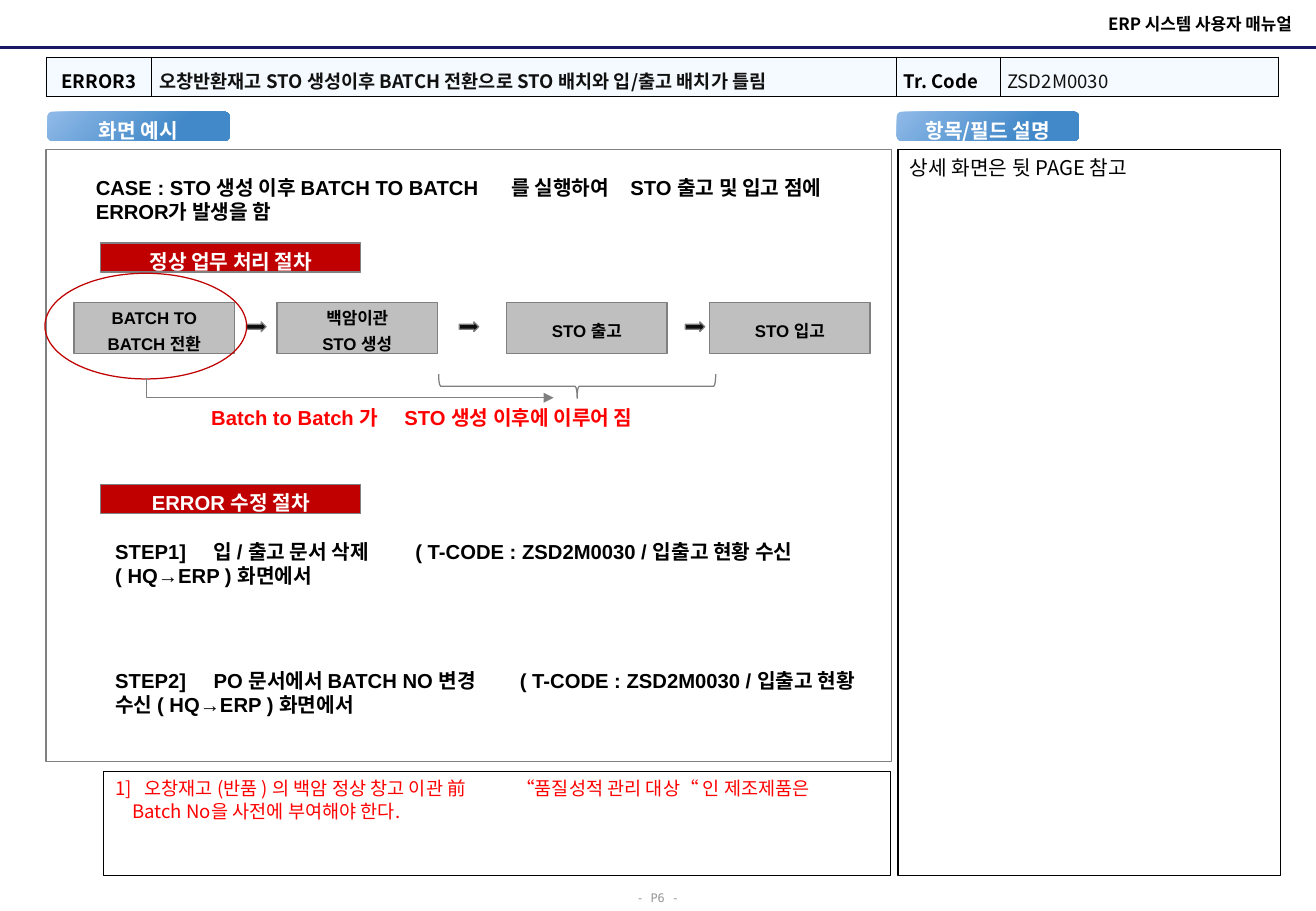
from lxml.etree import SubElement
from pptx import Presentation
from pptx.dml.color import RGBColor
from pptx.enum.shapes import MSO_CONNECTOR, MSO_SHAPE
from pptx.enum.text import MSO_ANCHOR, MSO_AUTO_SIZE, PP_ALIGN
from pptx.oxml.ns import qn
from pptx.util import Inches, Pt

NOTO = "Noto Sans CJK KR"
ARIAL = "Arial"
GREY = "808080"
RED = "C00000"
LEFT, MID, RIGHT, JUST = PP_ALIGN.LEFT, PP_ALIGN.CENTER, PP_ALIGN.RIGHT, PP_ALIGN.JUSTIFY


def color(code):
    """Turn a hex string into a colour."""
    return RGBColor.from_string(code)


def box(*sides):
    """Turn numbers into inch lengths."""
    return [Inches(side) for side in sides]


def write(frame, text, size=12, font=ARIAL, ink="000000", bold=True,
          align=LEFT, space=None, tabs=(), inset=0):
    """Fill a text frame, one paragraph per line, with the given format."""
    for row, line in enumerate(text.split("\n")):
        para = frame.add_paragraph() if row else frame.paragraphs[0]
        para.alignment = align
        if space:
            para.line_spacing = space
        props = para._p.get_or_add_pPr()
        if row and inset:
            props.set("marL", str(Inches(inset)))
        if "\t" in line:
            stops = SubElement(props, qn("a:tabLst"))
            for stop in tabs:
                SubElement(stops, qn("a:tab"), pos=str(Inches(stop)), algn="l")
        run = para.add_run()
        run.text = line
        face = run.font
        face.name, face.size, face.bold = font, Pt(size), bold
        face.color.rgb = color(ink)
        SubElement(run._r.get_or_add_rPr(), qn("a:ea"), typeface=NOTO)


def label(slide, text, x, y, w, h, wrap=True, **look):
    """Add a plain text box."""
    frame = slide.shapes.add_textbox(*box(x, y, w, h)).text_frame
    frame.word_wrap = wrap
    write(frame, text, **look)


def block(slide, kind, x, y, w, h, fill=None, line=GREY, text="",
          anchor=MSO_ANCHOR.MIDDLE, **look):
    """Add a preset shape with optional fill, outline and text."""
    shape = slide.shapes.add_shape(kind, *box(x, y, w, h))
    shape.shadow.inherit = False
    if fill:
        shape.fill.solid()
        shape.fill.fore_color.rgb = color(fill)
    else:
        shape.fill.background()
    if line:
        shape.line.color.rgb = color(line)
        shape.line.width = Pt(0.75)
    else:
        shape.line.fill.background()
    if text:
        shape.text_frame.word_wrap = True
        shape.text_frame.vertical_anchor = anchor
        write(shape.text_frame, text, **look)
    return shape


def link(slide, kind, ends, ink, width):
    """Add a connector without shadow."""
    line = slide.shapes.add_connector(kind, *box(*ends))
    line.line.color.rgb = color(ink)
    line.line.width = Pt(width)
    SubElement(line._element.spPr, qn("a:effectLst"))
    return line


def pill(slide, text, x, y):
    """Add a gradient heading above a panel."""
    shape = block(slide, MSO_SHAPE.ROUNDED_RECTANGLE, x, y, 1.5, 0.24, line=None,
                  text=text, font=NOTO, ink="FFFFFF", align=MID, space=1.5)
    shape.fill.gradient()
    shape.fill.gradient_angle = 315
    first, last = shape.fill.gradient_stops
    first.color.rgb, last.color.rgb = color("90BAE8"), color("4289C9")
    last.position = 0.7
    frame = shape.text_frame
    frame.margin_left = frame.margin_top = frame.margin_right = 0
    frame.margin_bottom = Inches(0.04)


def banner(slide, text, x, y):
    """Add a red section heading."""
    block(slide, MSO_SHAPE.RECTANGLE, x, y, 2.14, 0.24, fill=RED, text=text,
          ink="FFFFFF", align=MID, space=1.3)


def header(slide, x, y, w):
    """Place the page title and the rule under it."""
    title = slide.shapes.title
    title.left, title.top, title.width, title.height = box(x + w - 4.79, y + 0.06, 4.69, 0.27)
    frame = title.text_frame
    frame.auto_size = MSO_AUTO_SIZE.NONE
    frame.vertical_anchor = MSO_ANCHOR.MIDDLE
    write(frame, "ERP 시스템 사용자 매뉴얼", size=10, font=NOTO, align=RIGHT)
    link(slide, MSO_CONNECTOR.STRAIGHT, (x, y + 0.39, x + w, y + 0.39), "191966", 1.5)


def border(cell):
    """Draw thin black lines round a table cell."""
    props = cell._tc.get_or_add_tcPr()
    for spot, side in enumerate(("a:lnL", "a:lnR", "a:lnT", "a:lnB")):
        edge = props.makeelement(qn(side), {"w": str(Pt(0.5))})
        paint = SubElement(edge, qn("a:solidFill"))
        SubElement(paint, qn("a:srgbClr"), val="000000")
        props.insert(spot, edge)


def caption(slide, x, y):
    """Place the table that names the error and its code."""
    cells = (("ERROR3", 0.87, "000000", True, MID),
             ("오창반환재고 STO 생성이후 BATCH 전환으로 STO 배치와 입/출고 배치가 틀림",
              6.13, "111111", True, LEFT),
             ("Tr. Code", 0.85, "000000", True, LEFT),
             ("ZSD2M0030", 2.29, "111111", False, LEFT))
    table = slide.shapes.add_table(1, len(cells), *box(x, y, 10.14, 0.32)).table
    for col, (text, width, ink, bold, align) in enumerate(cells):
        table.columns[col].width = Inches(width)
        cell = table.cell(0, col)
        cell.margin_left = cell.margin_right = Inches(0.06)
        cell.margin_top = cell.margin_bottom = Inches(0.01)
        cell.vertical_anchor = MSO_ANCHOR.MIDDLE
        cell.fill.solid()
        cell.fill.fore_color.rgb = color("F4FAFF")
        border(cell)
        write(cell.text_frame, text, size=11, font=NOTO, ink=ink, bold=bold,
              align=align, space=1.3)


def flow(slide, x, y):
    """Place the four process boxes with their arrows and marks."""
    steps = (("BATCH TO\nBATCH 전환", 0), ("백암이관\nSTO 생성", 1.67),
             ("STO 출고", 3.56), ("STO 입고", 5.23))
    for text, shift in steps:
        block(slide, MSO_SHAPE.RECTANGLE, x + shift, y, 1.32, 0.42, fill="BFBFBF",
              text=text, size=10, align=MID, space=1.3)
    for shift in (1.42, 3.17, 5.03):
        block(slide, MSO_SHAPE.RIGHT_ARROW, x + shift, y + 0.16, 0.16, 0.08, fill="0D0D0D")
    block(slide, MSO_SHAPE.OVAL, x - 0.24, y - 0.24, 1.66, 0.87, line=RED)
    brace = block(slide, MSO_SHAPE.LEFT_BRACE, x + 4.04, y - 0.45, 0.2, 2.28)
    brace.rotation = 270
    bend = link(slide, MSO_CONNECTOR.ELBOW,
                (x + 2.35, y - 0.97, x + 2.19, y + 2.38), GREY, 0.75)
    props = bend._element.spPr
    props.find(qn("a:xfrm")).set("rot", str(270 * 60000))
    props.find(qn("a:prstGeom")).set("prst", "bentConnector2")
    SubElement(props.find(qn("a:ln")), qn("a:tailEnd"), type="triangle")
    label(slide, "Batch to Batch 가\tSTO 생성 이후에 이루어 짐", x + 1.03, y + 0.8,
          5.7, 0.3, ink="FF0000", tabs=(1.59,))


def example(slide, x, y):
    """Place the left panel with the case, the flow and the fix."""
    block(slide, MSO_SHAPE.RECTANGLE, x, y, 6.96, 5.04)
    pill(slide, "화면 예시", x + 0.01, y - 0.31)
    label(slide, "CASE : STO 생성 이후 BATCH TO BATCH\t를 실행하여\tSTO 출고 및 입고 점에 "
          "ERROR가 발생을 함", x + 0.31, y + 0.16, 6.64, 0.5, tabs=(3.42, 4.4))
    banner(slide, "정상 업무 처리 절차", x + 0.45, y + 0.77)
    flow(slide, x + 0.23, y + 1.26)
    banner(slide, "ERROR 수정 절차", x + 0.45, y + 2.76)
    tail = "\t( T-CODE : ZSD2M0030 / 입출고 현황 수신 ( HQ→ERP ) 화면에서"
    fixes = (("STEP1]\t입 / 출고 문서 삭제", 3.16, 2.47),
             ("STEP2]\tPO 문서에서 BATCH NO 변경", 4.22, 3.33))
    for text, drop, stop in fixes:
        label(slide, text + tail, x + 0.47, y + drop, 6.38, 0.5, tabs=(0.81, stop))


def notes(slide, x, y):
    """Place the right panel with the field notes."""
    block(slide, MSO_SHAPE.RECTANGLE, x, y, 3.15, 5.98, line="000000",
          text="상세 화면은 뒷 PAGE 참고", anchor=MSO_ANCHOR.TOP, font=NOTO,
          bold=False, align=JUST)
    pill(slide, "항목/필드 설명", x - 0.01, y - 0.31)


def footer(slide, x, y):
    """Place the red remark and the page number."""
    block(slide, MSO_SHAPE.RECTANGLE, x, y, 6.48, 0.86, line="000000",
          text="1]\t오창재고 (반품 ) 의 백암 정상 창고 이관 前\t“품질성적 관리 대상“ 인 제조제품은\n"
          "Batch No을 사전에 부여해야 한다.", anchor=MSO_ANCHOR.TOP, size=11, font=NOTO,
          ink="FF0000", bold=False, align=JUST, tabs=(0.24, 3.3), inset=0.14)
    label(slide, "- P6 -", x + 4.29, y + 0.9, 0.56, 0.25, wrap=False, size=7,
          font="DejaVu Sans Mono", ink="969696", bold=False, space=1.3)


def main():
    """Build the slide and save it."""
    deck = Presentation()
    deck.slide_width, deck.slide_height = box(10.83, 7.5)
    slide = deck.slides.add_slide(deck.slide_layouts[5])
    header(slide, 0, 0, 10.83)
    caption(slide, 0.38, 0.47)
    example(slide, 0.38, 1.23)
    notes(slide, 7.39, 1.23)
    footer(slide, 0.85, 6.35)
    deck.save("out.pptx")


if __name__ == "__main__":
    main()
